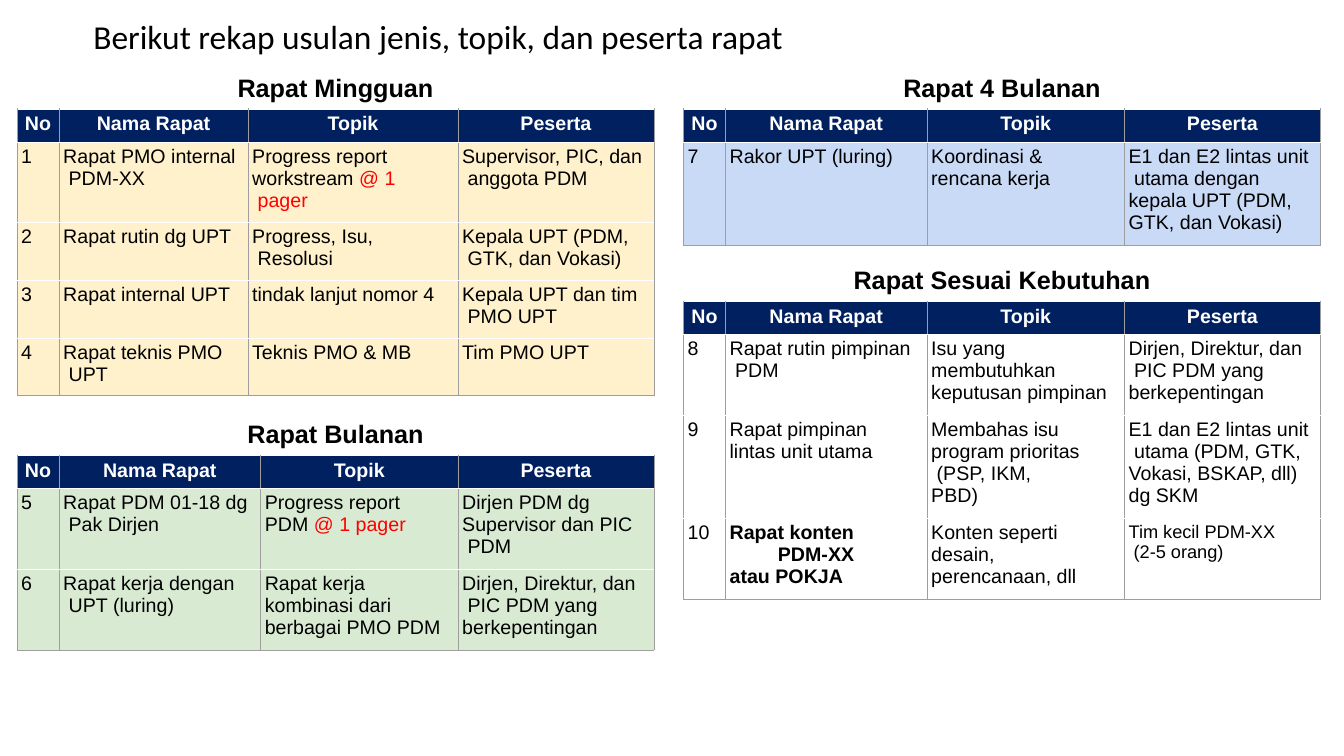
"""Build the slide that recaps the proposed meetings, topics and participants."""
from lxml.etree import SubElement
from pptx import Presentation
from pptx.dml.color import RGBColor
from pptx.enum.text import MSO_ANCHOR as Anchor, PP_ALIGN as Align
from pptx.oxml.ns import qn
from pptx.util import Pt

TITLE = "Berikut rekap usulan jenis, topik, dan peserta rapat"
HEADER = ["No", "Nama Rapat", "Topik", "Peserta"]
NAVY, GREY, BLACK, WHITE, RED = "002060", "9E9E9E", "000000", "FFFFFF", "FF0000"
LEFT, RIGHT = 12.2, 488.2
NARROW_NAME, WIDE_NAME = (30, 135, 150, 140), (30, 144, 141, 140)
HEADER_HEIGHT, LINE_HEIGHT, ROW_PADDING = 23.8, 16.4, 8.4
HEADING_RISE, HEADING_HEIGHT = 27.4, 24

# Asterisks enclose red text; a tuple holds text and its own format values.
SECTIONS = [
    ("Rapat Mingguan", LEFT, 77.8, NARROW_NAME, "FFF1CC", [
        ["1", "Rapat PMO internal\n PDM-XX", "Progress report\nworkstream *@ 1\n pager*",
         "Supervisor, PIC, dan\n anggota PDM"],
        ["2", "Rapat rutin dg UPT", "Progress, Isu,\n Resolusi", "Kepala UPT (PDM,\n GTK, dan Vokasi)"],
        ["3", "Rapat internal UPT", "tindak lanjut nomor 4", "Kepala UPT dan tim\n PMO UPT"],
        ["4", "Rapat teknis PMO\n UPT", "Teknis PMO & MB", "Tim PMO UPT"],
    ]),
    ("Rapat Bulanan", LEFT, 325.4, WIDE_NAME, "D9EAD3", [
        ["5", "Rapat PDM 01-18 dg\n Pak Dirjen", "Progress report\nPDM *@ 1 pager*",
         "Dirjen PDM dg\nSupervisor dan PIC\n PDM"],
        ["6", "Rapat kerja dengan\n UPT (luring)", "Rapat kerja\nkombinasi dari\nberbagai PMO PDM",
         "Dirjen, Direktur, dan\n PIC PDM yang\nberkepentingan"],
    ]),
    ("Rapat 4 Bulanan", RIGHT, 77.8, WIDE_NAME, "C9DAF7", [
        ["7", "Rakor UPT (luring)", "Koordinasi &\nrencana kerja",
         "E1 dan E2 lintas unit\n utama dengan\nkepala UPT (PDM,\nGTK, dan Vokasi)"],
    ]),
    ("Rapat Sesuai Kebutuhan", RIGHT, 215.3, WIDE_NAME, WHITE, [
        ["8", "Rapat rutin pimpinan\n PDM", "Isu yang\nmembutuhkan\nkeputusan pimpinan",
         "Dirjen, Direktur, dan\n PIC PDM yang\nberkepentingan"],
        ["9", "Rapat pimpinan\nlintas unit utama", "Membahas isu\nprogram prioritas\n (PSP, IKM,\nPBD)",
         "E1 dan E2 lintas unit\n utama (PDM, GTK,\nVokasi, BSKAP, dll)\ndg SKM"],
        ["10", ("Rapat konten\nPDM-XX\natau POKJA", {"bold": True}), "Konten seperti\ndesain,\nperencanaan, dll",
         ("Tim kecil PDM-XX\n (2-5 orang)", {"size": Pt(13)})],
    ]),
]


def color(value):
    return RGBColor.from_string(value)


def apply(target, values):
    for name, value in values.items():
        setattr(target, name, value)


def write(paragraph, text, hue, align=Align.LEFT, **values):
    paragraph.alignment = align
    for part, piece in enumerate(text.split("*")):
        for number, line in enumerate(piece.split("\n")):
            if number:
                paragraph.add_line_break()
            if line:
                run = paragraph.add_run()
                run.text = line
                apply(run.font, {"name": "Arial", "size": Pt(14), "bold": False, **values})
                run.font.color.rgb = color(RED if part % 2 else hue)


def paint(cell, fill):
    properties = cell._tc.get_or_add_tcPr()
    for side in ("lnL", "lnR", "lnB"):
        border = SubElement(properties, qn(f"a:{side}"), w=str(Pt(0.75)))
        SubElement(SubElement(border, qn("a:solidFill")), qn("a:srgbClr"), val=GREY)
    cell.fill.solid()
    cell.fill.fore_color.rgb = color(fill)


def fill_body(cell, content):
    text, values = content if isinstance(content, tuple) else (content, {})
    apply(cell, {"margin_left": Pt(3), "margin_right": 0, "margin_top": Pt(2.3), "margin_bottom": 0})
    frame = cell.text_frame
    if not values.get("bold"):
        write(frame.paragraphs[0], text, BLACK, **values)
        return
    cell.margin_right = Pt(52)
    for number, line in enumerate(text.split("\n")):
        paragraph = frame.add_paragraph() if number else frame.paragraphs[0]
        write(paragraph, line, BLACK, Align.RIGHT if number == 1 else Align.LEFT, **values)


def line_count(content):
    text = content[0] if isinstance(content, tuple) else content
    return text.count("\n") + 1


def add_section(slide, heading, left, top, widths, fill, rows):
    total = sum(widths)
    box = slide.shapes.add_textbox(Pt(left), Pt(top - HEADING_RISE), Pt(total), Pt(HEADING_HEIGHT))
    apply(box.text_frame, {"word_wrap": True, "margin_top": Pt(1), "margin_bottom": 0})
    write(box.text_frame.paragraphs[0], heading, BLACK, Align.CENTER, size=Pt(18), bold=True)

    heights = [HEADER_HEIGHT] + [ROW_PADDING + LINE_HEIGHT * max(map(line_count, row)) for row in rows]
    table = slide.shapes.add_table(len(heights), len(widths), Pt(left), Pt(top), Pt(total), Pt(sum(heights))).table
    apply(table, {"first_row": False, "horz_banding": False})
    for column, width in zip(table.columns, widths):
        column.width = Pt(width)
    for row, height in zip(table.rows, heights):
        row.height = Pt(height)
    for index, label in enumerate(HEADER):
        cell = table.cell(0, index)
        apply(cell, {"margin_left": 0, "margin_right": 0, "margin_top": Pt(3), "margin_bottom": 0})
        write(cell.text_frame.paragraphs[0], label, WHITE, Align.CENTER, bold=True)
        paint(cell, NAVY)
    for number, row in enumerate(rows, 1):
        for index, content in enumerate(row):
            fill_body(table.cell(number, index), content)
            paint(table.cell(number, index), fill)


def main():
    presentation = Presentation()
    apply(presentation, {"slide_width": Pt(960), "slide_height": Pt(540)})
    slide = presentation.slides.add_slide(presentation.slide_layouts[5])
    title = slide.shapes.title
    apply(title, {"left": Pt(21), "top": Pt(9.5), "width": Pt(584), "height": Pt(31)})
    apply(title.text_frame, {"margin_left": 0, "margin_right": 0, "margin_top": Pt(1), "margin_bottom": 0,
                             "word_wrap": True, "vertical_anchor": Anchor.MIDDLE})
    write(title.text_frame.paragraphs[0], TITLE, BLACK, Align.CENTER, name="Calibri", size=Pt(23.9))
    for section in SECTIONS:
        add_section(slide, *section)
    presentation.save("out.pptx")


if __name__ == "__main__":
    main()
